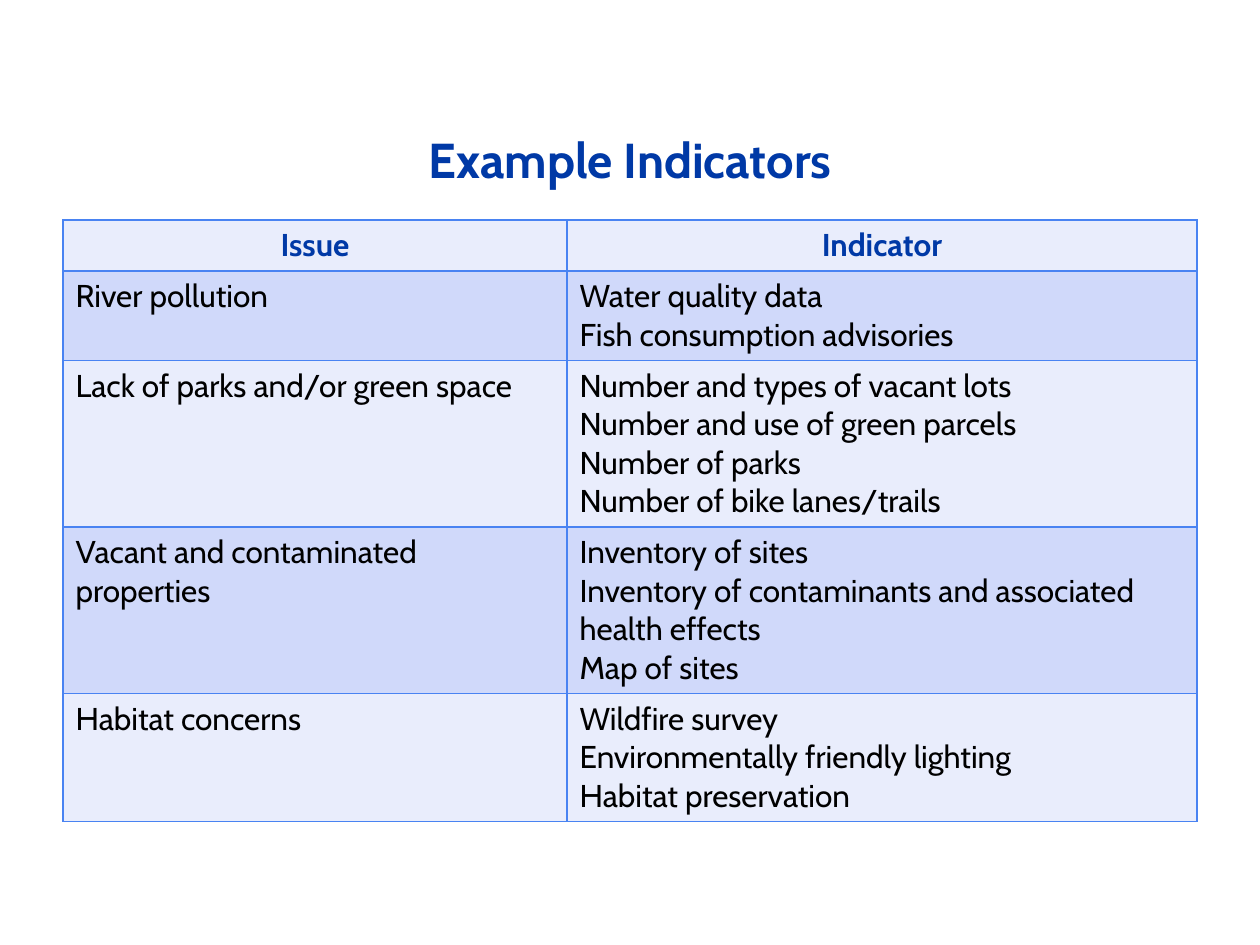
from dataclasses import dataclass

from pptx import Presentation
from pptx.dml.color import RGBColor
from pptx.enum.text import MSO_ANCHOR, MSO_AUTO_SIZE, PP_ALIGN
from pptx.oxml.ns import qn
from pptx.util import Emu, Pt
from lxml.etree import SubElement

SCALE = 914400 / 126  # EMU in one px


@dataclass(frozen=True)
class Theme:
    font: str = "Cabin"
    blue: str = "0039A6"
    ink: str = "000000"
    rule: str = "4983F2"
    bands: tuple = ("E9EDFC", "D0D9FA")
    title: int = 28
    body: int = 18
    lead: int = 30


THEME = Theme()

HEAD = ("Issue", "Indicator")
ROWS = (
    ("River pollution",
     ("Water quality data", "Fish consumption advisories")),
    ("Lack of parks and/or green space",
     ("Number and types of vacant lots", "Number and use of green parcels",
      "Number of parks", "Number of bike lanes/trails")),
    ("Vacant and contaminated properties",
     ("Inventory of sites",
      "Inventory of contaminants and associated health effects",
      "Map of sites")),
    ("Habitat concerns",
     ("Wildfire survey", "Environmentally friendly lighting",
      "Habitat preservation")),
)
WIDTHS = (504, 630)
HEIGHTS = (51, 89, 166, 166, 128)


def px(num):
    return Emu(round(num * SCALE))


def write(frame, lines, size, color, bold=False, align=PP_ALIGN.LEFT):
    """Fill a text frame, one paragraph for each line."""
    for i, line in enumerate(lines):
        para = frame.add_paragraph() if i else frame.paragraphs[0]
        para.alignment = align
        run = para.add_run()
        run.text = line
        font = run.font
        font.name, font.size, font.bold = THEME.font, Pt(size), bold
        font.color.rgb = RGBColor.from_string(color)


def add_title(slide, text):
    shape = slide.shapes.title
    shape.left, shape.top = px(63), px(38)
    shape.width, shape.height = px(1134), px(157)
    frame = shape.text_frame
    frame.auto_size = MSO_AUTO_SIZE.NONE
    frame.vertical_anchor = MSO_ANCHOR.BOTTOM
    write(frame, [text], THEME.title, THEME.blue, True, PP_ALIGN.CENTER)
    frame.paragraphs[0].line_spacing = Pt(THEME.lead)


def add_rules(cell):
    """Draw the four borders, which must precede the fill."""
    props = cell._tc.get_or_add_tcPr()
    for side in ("lnL", "lnR", "lnT", "lnB"):
        line = SubElement(props, qn(f"a:{side}"), w=str(Pt(1)))
        fill = SubElement(line, qn("a:solidFill"))
        SubElement(fill, qn("a:srgbClr"), val=THEME.rule)


def fill_cell(cell, lines, band, **style):
    add_rules(cell)
    cell.fill.solid()
    cell.fill.fore_color.rgb = RGBColor.from_string(band)
    write(cell.text_frame, lines, THEME.body, **style)


def add_grid(slide):
    grid = slide.shapes.add_table(
        len(HEIGHTS), len(WIDTHS), px(63), px(220),
        px(sum(WIDTHS)), px(sum(HEIGHTS))).table
    for col, width in zip(grid.columns, WIDTHS):
        col.width = px(width)
    for row, height in zip(grid.rows, HEIGHTS):
        row.height = px(height)

    # Header row
    for c, label in enumerate(HEAD):
        fill_cell(grid.cell(0, c), [label], THEME.bands[0],
                  color=THEME.blue, bold=True, align=PP_ALIGN.CENTER)

    # Banded body rows
    for r, (issue, signs) in enumerate(ROWS, 1):
        for c, lines in enumerate(([issue], signs)):
            fill_cell(grid.cell(r, c), lines, THEME.bands[r % 2],
                      color=THEME.ink)


def main():
    deck = Presentation()
    deck.slide_width, deck.slide_height = px(1260), px(945)
    slide = deck.slides.add_slide(deck.slide_layouts[5])
    add_title(slide, "Example Indicators")
    add_grid(slide)
    deck.save("out.pptx")


if __name__ == "__main__":
    main()
